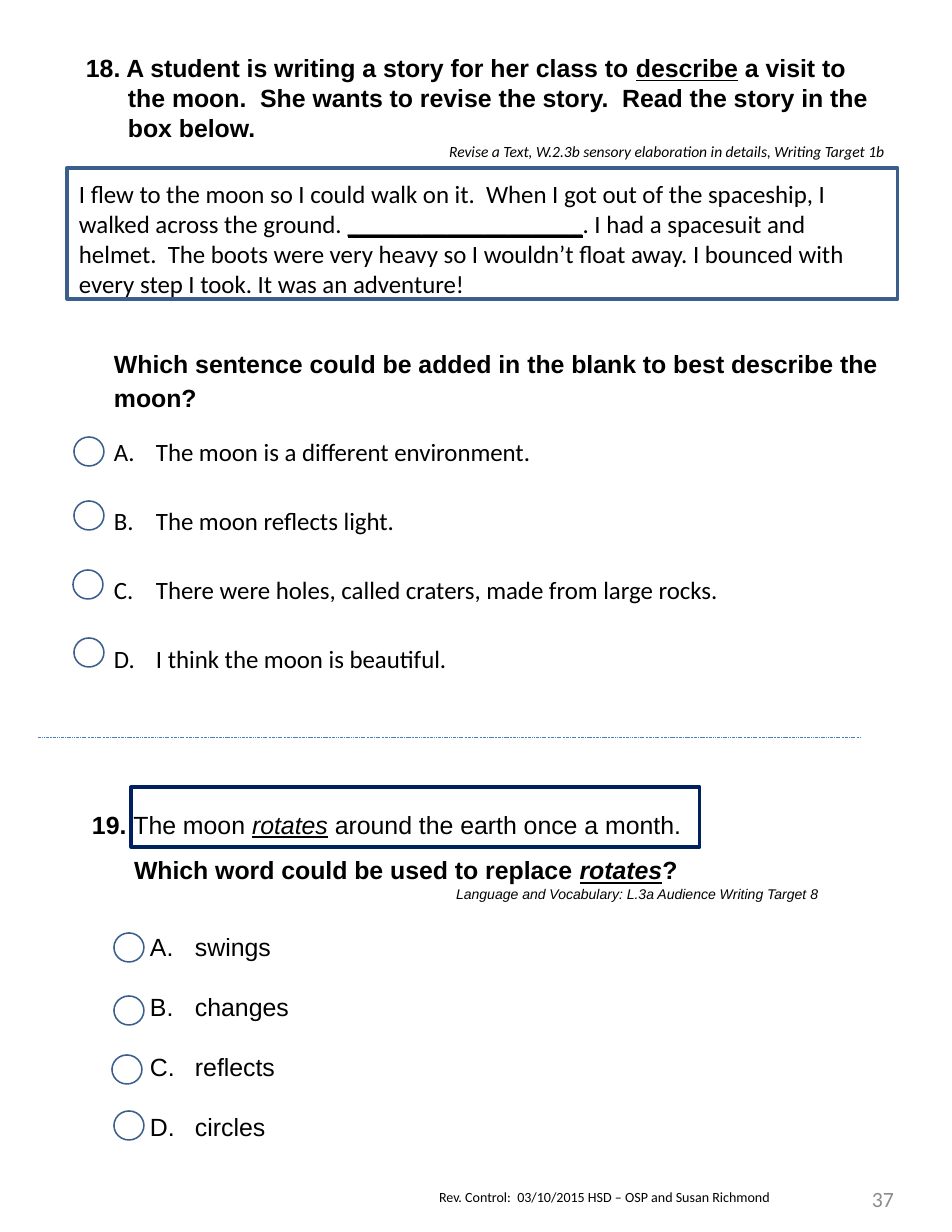
import pptx
import pptx.util
import pptx.dml.color
import pptx.enum.shapes
import pptx.enum.text
import pptx.enum.dml
import pptx.oxml.ns
import lxml.etree as etree

BLACK = pptx.dml.color.RGBColor(0x00, 0x00, 0x00)
GREY = pptx.dml.color.RGBColor(0x8C, 0x8C, 0x8C)
WHITE = pptx.dml.color.RGBColor(0xFF, 0xFF, 0xFF)
STEEL = pptx.dml.color.RGBColor(0x3A, 0x5F, 0x8C)
NAVY = pptx.dml.color.RGBColor(0x00, 0x20, 0x60)
BLUE = pptx.dml.color.RGBColor(0x4B, 0x7E, 0xBC)
RIGHT = pptx.enum.text.PP_ALIGN.RIGHT
LEFT = pptx.enum.text.PP_ALIGN.LEFT
TOP = pptx.enum.text.MSO_ANCHOR.TOP
MIDDLE = pptx.enum.text.MSO_ANCHOR.MIDDLE
SCALE = 914400 / 112

# Paragraph formats; line, gap, margin and indent in px
HEAD = dict(font="Arial", size=16, line=30, margin=49, indent=-42)
NOTE = dict(font="Calibri", size=10, line=18, align=RIGHT)
STORY = dict(font="Calibri", size=16, line=30, gap=18)
ASK = dict(font="Arial", size=16, line=34, gap=46, margin=35)
PICK = dict(font="Calibri", size=16, line=34, gap=35, margin=77, indent=-42, list=True)
ITEM = dict(font="Arial", size=16, line=30, gap=30, margin=103, indent=-45, list=True)

# Content: each run is text and style letters
MOON = [
    (HEAD, [("18. A student is writing a story for her class to ", "b"),
            ("describe", "bu"),
            (" a visit to the moon.  She wants to revise the story.  "
             "Read the story in the box below.", "b")]),
    (NOTE, [("Revise a Text, W.2.3b sensory elaboration in details, "
             "Writing Target 1b", "i")]),
    (STORY, [("I flew to the moon so I could walk on it.  When I got out of the "
              "spaceship, I walked across the ground. ", ""),
             ("___________________", "bu"),
             (". I had a spacesuit and helmet.  The boots were very heavy so I "
              "wouldn’t float away. I bounced with every step I took. "
              "It was an adventure!", "")]),
    (ASK, [("Which sentence could be added in the blank to best describe "
            "the moon?", "b")]),
    (PICK | dict(gap=20), [("The moon is a different environment.", "")]),
    (PICK, [("The moon reflects light.", "")]),
    (PICK, [("There were holes, called craters, made from large rocks.", "")]),
    (PICK, [("I think the moon is beautiful.", "")]),
]
WORD = [
    (HEAD | dict(indent=-49), [
        ("19. ", "b"), ("The moon ", ""), ("rotates", "iu"),
        (" around the earth once a month.", "")]),
    (HEAD | dict(gap=16, margin=42, indent=0), [
        ("Which word could be used to replace ", "b"), ("rotates", "biu"),
        ("?", "b")]),
    (NOTE | dict(font="Arial", size=9, line=17), [
        ("Language and Vocabulary: L.3a Audience Writing Target 8", "i")]),
] + [(ITEM, [(word, "")]) for word in ("swings", "changes", "reflects", "circles")]
FOOT = [(dict(font="Calibri", size=9),
         [("Rev. Control:  03/10/2015 HSD – OSP and Susan Richmond", "")])]
PAGE = [(dict(font="Calibri", size=14, color=GREY, align=RIGHT), [("37", "")])]

# Text boxes: left, top, width, height, anchor, content
TEXTS = [
    (427, 1183, 476, 29, TOP, FOOT),
    (80, 803, 750, 379, TOP, WORD),
    (803, 1166, 103, 66, MIDDLE, PAGE),
    (67, 47, 829, 675, TOP, MOON),
]
RINGS = [(74, 437), (74, 501), (73, 570), (74, 638),
         (114, 933), (114, 996), (112, 1055), (114, 1111)]
FRAMES = [(67, 168, 831, 131, STEEL), (131, 787, 569, 60, NAVY)]


def px(num):
    return pptx.util.Emu(round(num * SCALE))


def put(thing, vals):
    for name, val in vals.items():
        setattr(thing, name, val)


def write(frame, parts):
    for num, (form, runs) in enumerate(parts):
        para = frame.paragraphs[0] if num == 0 else frame.add_paragraph()
        put(para, dict(alignment=form.get("align", LEFT),
                       space_before=px(form.get("gap", 0))))
        if "line" in form:
            para.line_spacing = px(form["line"])
        props = para._p.get_or_add_pPr()
        props.set("marL", str(px(form.get("margin", 0))))
        props.set("indent", str(px(form.get("indent", 0))))
        if form.get("list"):
            mark = etree.SubElement(props, pptx.oxml.ns.qn("a:buAutoNum"))
            mark.set("type", "alphaUcPeriod")
        for text, style in runs:
            run = para.add_run()
            run.text = text
            put(run.font, dict(name=form["font"], size=pptx.util.Pt(form["size"]),
                               bold="b" in style, italic="i" in style,
                               underline="u" in style))
            run.font.color.rgb = form.get("color", BLACK)


def outline(slide, kind, spot, color, width, fill=None):
    shape = slide.shapes.add_shape(kind, *map(px, spot))
    shape.shadow.inherit = False
    if fill is None:
        shape.fill.background()
    else:
        shape.fill.solid()
        shape.fill.fore_color.rgb = fill
    shape.line.color.rgb = color
    shape.line.width = pptx.util.Pt(width)


def main():
    deck = pptx.Presentation()
    put(deck, dict(slide_width=px(952), slide_height=px(1232)))
    slide = deck.slides.add_slide(deck.slide_layouts[6])
    kinds = pptx.enum.shapes.MSO_SHAPE

    # Questions, footer and page number
    for *spot, anchor, parts in TEXTS:
        frame = slide.shapes.add_textbox(*map(px, spot)).text_frame
        put(frame, dict(word_wrap=True, vertical_anchor=anchor,
                        margin_left=px(12), margin_right=px(12),
                        margin_top=px(6), margin_bottom=px(6)))
        write(frame, parts)

    # Answer circles
    for left, top in RINGS:
        outline(slide, kinds.OVAL, (left, top, 30, 29), STEEL, 1, WHITE)

    # Frames around the story and the sentence
    for *spot, color in FRAMES:
        outline(slide, kinds.RECTANGLE, spot, color, 2)

    # Divider between the questions
    rule = slide.shapes.add_connector(pptx.enum.shapes.MSO_CONNECTOR.STRAIGHT,
                                      *map(px, (38, 737, 860, 737)))
    rule.line.color.rgb = BLUE
    put(rule.line, dict(width=pptx.util.Pt(0.25),
                        dash_style=pptx.enum.dml.MSO_LINE.DASH_DOT_DOT))
    etree.SubElement(rule._element.spPr, pptx.oxml.ns.qn("a:effectLst"))

    deck.save("out.pptx")


if __name__ == "__main__":
    main()
